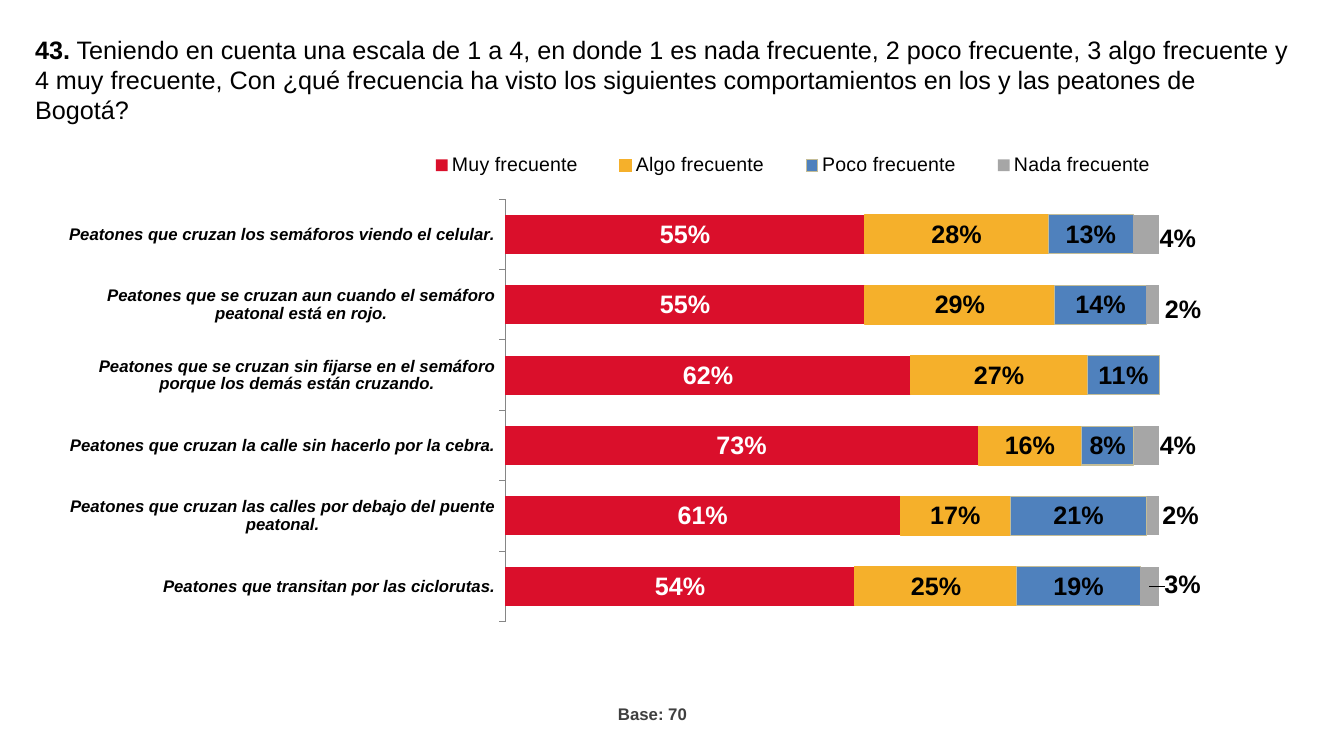
from lxml import etree
from pptx import Presentation
from pptx.chart.data import CategoryChartData
from pptx.dml.color import RGBColor
from pptx.enum.chart import XL_CHART_TYPE as ChartType
from pptx.enum.chart import XL_LABEL_POSITION as LabelPosition
from pptx.enum.chart import XL_LEGEND_POSITION as LegendPosition
from pptx.enum.chart import XL_TICK_MARK as TickMark
from pptx.enum.text import MSO_ANCHOR as Anchor
from pptx.enum.text import PP_ALIGN as Align
from pptx.oxml.ns import qn
from pptx.util import Emu, Pt

# Content
QUESTION = [
    ("43.", True),
    (" Teniendo en cuenta una escala de 1 a 4, en donde 1 es nada frecuente, "
     "2 poco frecuente, 3 algo frecuente y 4 muy frecuente, Con ¿qué frecuencia "
     "ha visto los siguientes comportamientos en los y las peatones de Bogotá?", False),
]
BASE = [("Base: 70", True)]
BEHAVIOURS = [
    "Peatones que transitan por las ciclorutas.",
    "Peatones que cruzan las calles por debajo del puente peatonal.",
    "Peatones que cruzan la calle sin hacerlo por la cebra.",
    "Peatones que se cruzan sin fijarse en el semáforo porque los demás están cruzando.",
    "Peatones que se cruzan aun cuando el semáforo peatonal está en rojo.",
    "Peatones que cruzan los semáforos viendo el celular.",
]
# name, values, fill, outline, label colour
ANSWERS = [
    ("Muy frecuente", (0.54, 0.61, 0.73, 0.62, 0.55, 0.55), "red", None, "white"),
    ("Algo frecuente", (0.25, 0.17, 0.16, 0.27, 0.29, 0.28), "amber", "amber", "black"),
    ("Poco frecuente", (0.19, 0.21, 0.08, 0.11, 0.14, 0.13), "blue", "sand", "black"),
    ("Nada frecuente", (0.03, 0.02, 0.04, None, 0.02, 0.04), "grey", None, "black"),
]
# px from the middle of the last segment to its label, by behaviour
LABEL_SHIFTS = {0: (33, -2), 1: (28, 0), 2: (31, 0), 4: (30, 5), 5: (32, 4)}

COLORS = {
    "red": "DA0F2B", "amber": "F5B02B", "blue": "4F81BD", "grey": "A6A6A6",
    "sand": "C4BD97", "black": "000000", "white": "FFFFFF",
    "charcoal": "3F3F3F", "axis": "868686",
}
FONT = "Arial"
SCALE = 914400 / 100.8
CHART_BOX = (69, 117, 1313, 567)
PLOT = (0.33, 0.145, 0.5, 0.745)
LEGEND = (0.25, 0.05, 0.6, 0.07)


def px(*lengths):
    return [Emu(round(length * SCALE)) for length in lengths]


def color(name):
    return RGBColor.from_string(COLORS[name])


def style(font, size, name="black", bold=False, italic=False):
    font.name, font.size, font.bold, font.italic = FONT, Pt(size), bold, italic
    font.color.rgb = color(name)


def write(box, spans, size, name="black", align=Align.LEFT, spacing=1.0):
    frame = box.text_frame
    frame.word_wrap = True
    frame.vertical_anchor = Anchor.TOP
    frame.margin_left = frame.margin_right = px(10)[0]
    frame.margin_top = frame.margin_bottom = px(5)[0]
    para = frame.paragraphs[0]
    para.alignment, para.line_spacing = align, spacing
    for text, bold in spans:
        span = para.add_run()
        span.text = text
        style(span.font, size, name, bold)


def set_layout(parent, position, **parts):
    """Give a chart part a manual layout, as shares of the chart."""
    for old in parent.findall(qn("c:layout")):
        parent.remove(old)
    layout = etree.Element(qn("c:layout"))
    manual = etree.SubElement(layout, qn("c:manualLayout"))
    for tag, value in parts.items():
        etree.SubElement(manual, qn("c:" + tag)).set("val", str(value))
    parent.insert(position, layout)


def frame_parts(frame):
    edges = {"xMode": "edge", "yMode": "edge"}
    return edges | dict(zip("xywh", frame))


deck = Presentation()
deck.slide_width, deck.slide_height = px(1344, 756)
page = deck.slides.add_slide(deck.slide_layouts[5])

# Question
title = page.shapes.title
title.left, title.top, title.width, title.height = px(25, 29, 1281, 100)
write(title, QUESTION, 18)

# Base
base = page.shapes.add_textbox(*px(566, 702, 131, 25))
write(base, BASE, 12, "charcoal", Align.RIGHT, 0.83)

# Chart
data = CategoryChartData(number_format="0%")
data.categories = BEHAVIOURS
for name, values, *_ in ANSWERS:
    data.add_series(name, values)
chart = page.shapes.add_chart(ChartType.BAR_STACKED_100, *px(*CHART_BOX), data).chart
chart.has_title = False
style(chart.font, 18)
set_layout(chart.plots[0]._element.getparent(), 0,
           layoutTarget="inner", **frame_parts(PLOT))

# Axes
behaviour_axis = chart.category_axis
behaviour_axis.major_tick_mark = TickMark.OUTSIDE
behaviour_axis.format.line.color.rgb = color("axis")
style(behaviour_axis.tick_labels.font, 12, bold=True, italic=True)
chart.value_axis.visible = False
chart.value_axis.has_major_gridlines = False

# Legend
chart.has_legend = True
chart.legend.position = LegendPosition.RIGHT
chart.legend.include_in_layout = False
style(chart.legend.font, 14)
set_layout(chart.legend._element, 1, **frame_parts(LEGEND))

# Bars and their labels
plot = chart.plots[0]
plot.gap_width, plot.overlap, plot.vary_by_categories = 81, 100, False
for series, (_, _, fill, outline, label_color) in zip(plot.series, ANSWERS):
    series.format.fill.solid()
    series.format.fill.fore_color.rgb = color(fill)
    if outline:
        series.format.line.color.rgb = color(outline)
        series.format.line.width = Pt(0.75)
    else:
        series.format.line.fill.background()
    labels = series.data_labels
    labels.show_value = True
    labels.number_format, labels.number_format_is_linked = "0%", False
    labels.position = LabelPosition.CENTER
    style(labels.font, 18, label_color, bold=True)

# Labels of the last answer sit to the right of the bars
last = plot.series[len(ANSWERS) - 1]
for index, (right, down) in LABEL_SHIFTS.items():
    label = last.points[index].data_label
    style(label.font, 18, bold=True)
    label.position = LabelPosition.CENTER
    element = label.font._element.getparent()
    while element.tag != qn("c:dLbl"):
        element = element.getparent()
    set_layout(element, 1, x=round(right / CHART_BOX[2], 3),
               y=round(down / CHART_BOX[3], 3))

deck.save("out.pptx")
